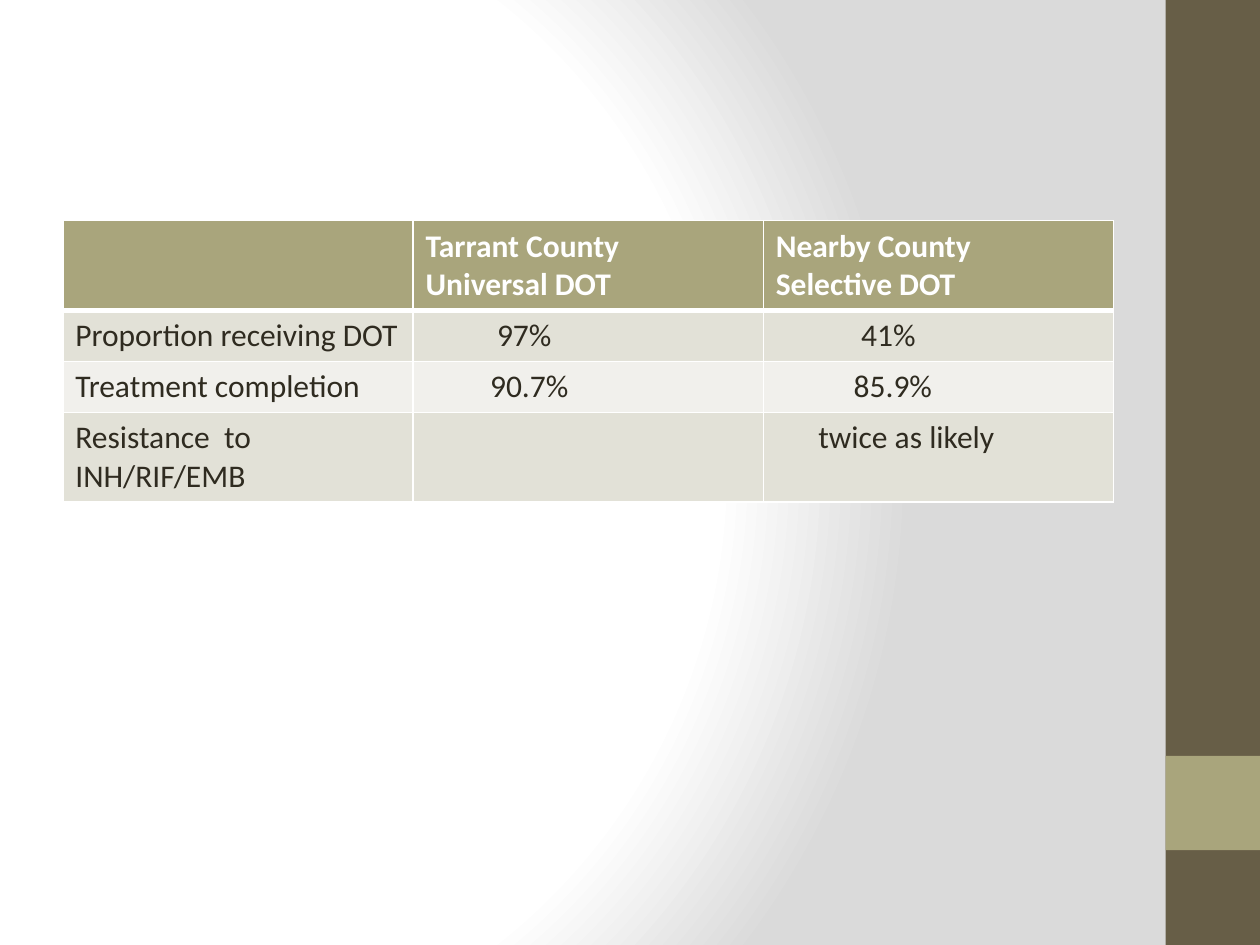
from pptx import Presentation
from pptx.dml.color import RGBColor
from pptx.enum.shapes import MSO_SHAPE
from pptx.oxml import parse_xml
from pptx.oxml.ns import nsdecls
from pptx.util import Cm, Pt

RECTANGLE = MSO_SHAPE.RECTANGLE
FONT = "Calibri"
WHITE, DARK_TEXT = "FFFFFF", "2F2B20"
BROWN, OLIVE = "675E47", "A9A57C"
BAND_FILLS = ["E2E1D7", "F1F0EC"]
BACKGROUND_STOPS = [(0, WHITE), (75, WHITE), (100, "DADADA")]

# Sidebar rectangles: top, height, colour
SIDEBAR_LEFT, SIDEBAR_WIDTH = 23.5, 1.9
SIDEBAR = [(0, 19.05, BROWN), (15.24, 1.9, OLIVE)]

TABLE_LEFT, TABLE_TOP = 1.27, 4.45
COLUMN_WIDTH = 7.06
ROW_HEIGHTS = [1.78, 1.03, 1.03, 1.78]
CELL_MARGIN = 0.25

# Each cell: text, extra left indent
ROWS = [
    [("", 0), ("Tarrant County\nUniversal DOT", 0), ("Nearby County\nSelective DOT", 0)],
    [("Proportion receiving DOT", 0), ("97%", 1.44), ("41%", 1.72)],
    [("Treatment completion", 0), ("90.7%", 1.3), ("85.9%", 1.57)],
    [("Resistance  to INH/RIF/EMB", 0), ("", 0), ("twice as likely", 0.86)],
]


def rgb(color):
    return RGBColor.from_string(color)


def set_background(slide):
    """Give the slide a circular gradient centred left of the middle."""
    stops = "".join(
        f'<a:gs pos="{position * 1000}"><a:srgbClr val="{color}"/></a:gs>'
        for position, color in BACKGROUND_STOPS
    )
    background = parse_xml(
        f'<p:bg {nsdecls("p", "a")}><p:bgPr><a:gradFill rotWithShape="1">'
        f'<a:gsLst>{stops}</a:gsLst><a:path path="circle">'
        '<a:fillToRect l="20000" t="50000" r="100000" b="50000"/></a:path>'
        '</a:gradFill><a:effectLst/></p:bgPr></p:bg>'
    )
    slide.element.cSld.insert(0, background)


def add_sidebar(slide):
    for top, height, color in SIDEBAR:
        shape = slide.shapes.add_shape(
            RECTANGLE, Cm(SIDEBAR_LEFT), Cm(top), Cm(SIDEBAR_WIDTH), Cm(height)
        )
        shape.shadow.inherit = False
        shape.fill.solid()
        shape.fill.fore_color.rgb = rgb(color)
        shape.line.fill.background()


def set_borders(cell, top, bottom):
    """Draw white borders; top and bottom widths are in points."""
    widths = {"lnL": 1, "lnR": 1, "lnT": top, "lnB": bottom}
    properties = cell._tc.get_or_add_tcPr()
    for index, (side, width) in enumerate(widths.items()):
        border = parse_xml(
            f'<a:{side} {nsdecls("a")} w="{Pt(width)}"><a:solidFill>'
            f'<a:srgbClr val="{WHITE}"/></a:solidFill></a:{side}>'
        )
        properties.insert(index, border)


def fill_cell(cell, text, indent, row_index):
    is_header = row_index == 0
    cell.text = text
    cell.margin_left = Cm(CELL_MARGIN + indent)
    cell.fill.solid()
    cell.fill.fore_color.rgb = rgb(OLIVE if is_header else BAND_FILLS[(row_index - 1) % 2])
    set_borders(cell, top=3 if row_index == 1 else 1, bottom=3 if is_header else 1)
    for paragraph in cell.text_frame.paragraphs:
        paragraph.font.name = FONT
        paragraph.font.size = Pt(18)
        paragraph.font.bold = is_header
        paragraph.font.color.rgb = rgb(WHITE if is_header else DARK_TEXT)


def add_comparison_table(slide):
    column_count = len(ROWS[0])
    table = slide.shapes.add_table(
        len(ROWS), column_count, Cm(TABLE_LEFT), Cm(TABLE_TOP),
        Cm(COLUMN_WIDTH * column_count), Cm(sum(ROW_HEIGHTS)),
    ).table
    for column in table.columns:
        column.width = Cm(COLUMN_WIDTH)
    for row_index, (row, height) in enumerate(zip(ROWS, ROW_HEIGHTS)):
        table.rows[row_index].height = Cm(height)
        for column_index, (text, indent) in enumerate(row):
            fill_cell(table.cell(row_index, column_index), text, indent, row_index)


def main():
    presentation = Presentation()
    presentation.slide_width, presentation.slide_height = Cm(25.4), Cm(19.05)
    slide = presentation.slides.add_slide(presentation.slide_layouts[6])
    set_background(slide)
    add_sidebar(slide)
    add_comparison_table(slide)
    presentation.save("out.pptx")


if __name__ == "__main__":
    main()
